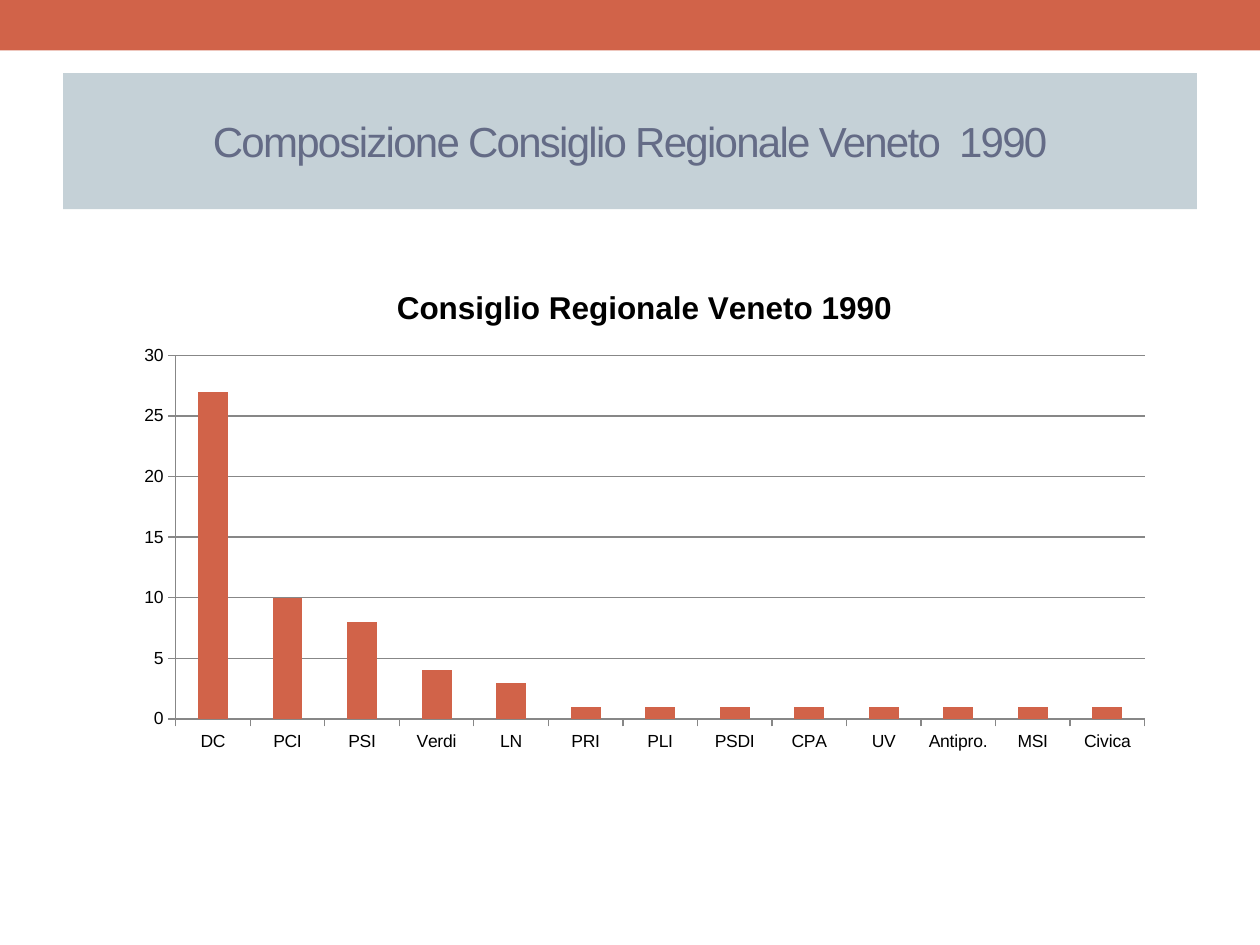
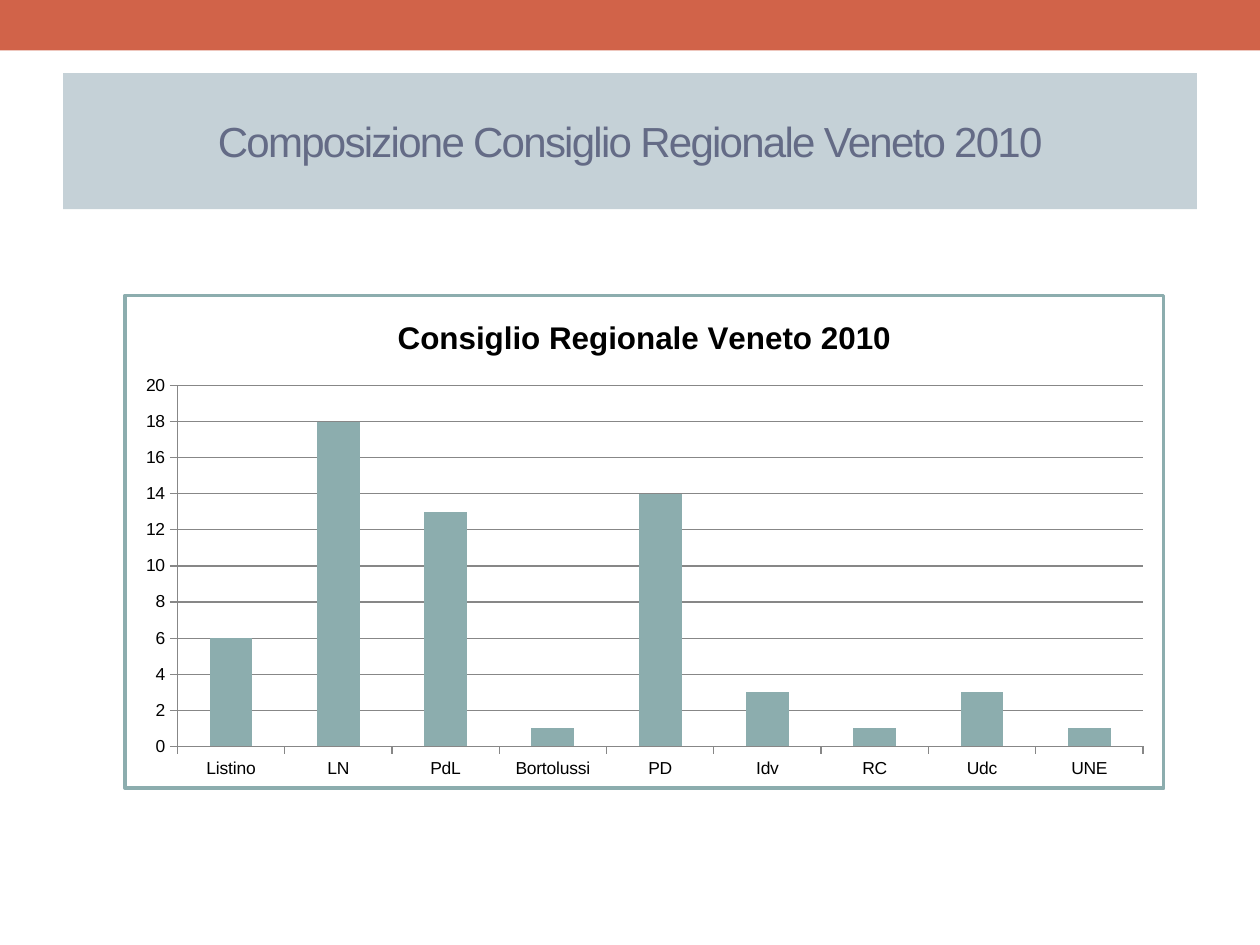
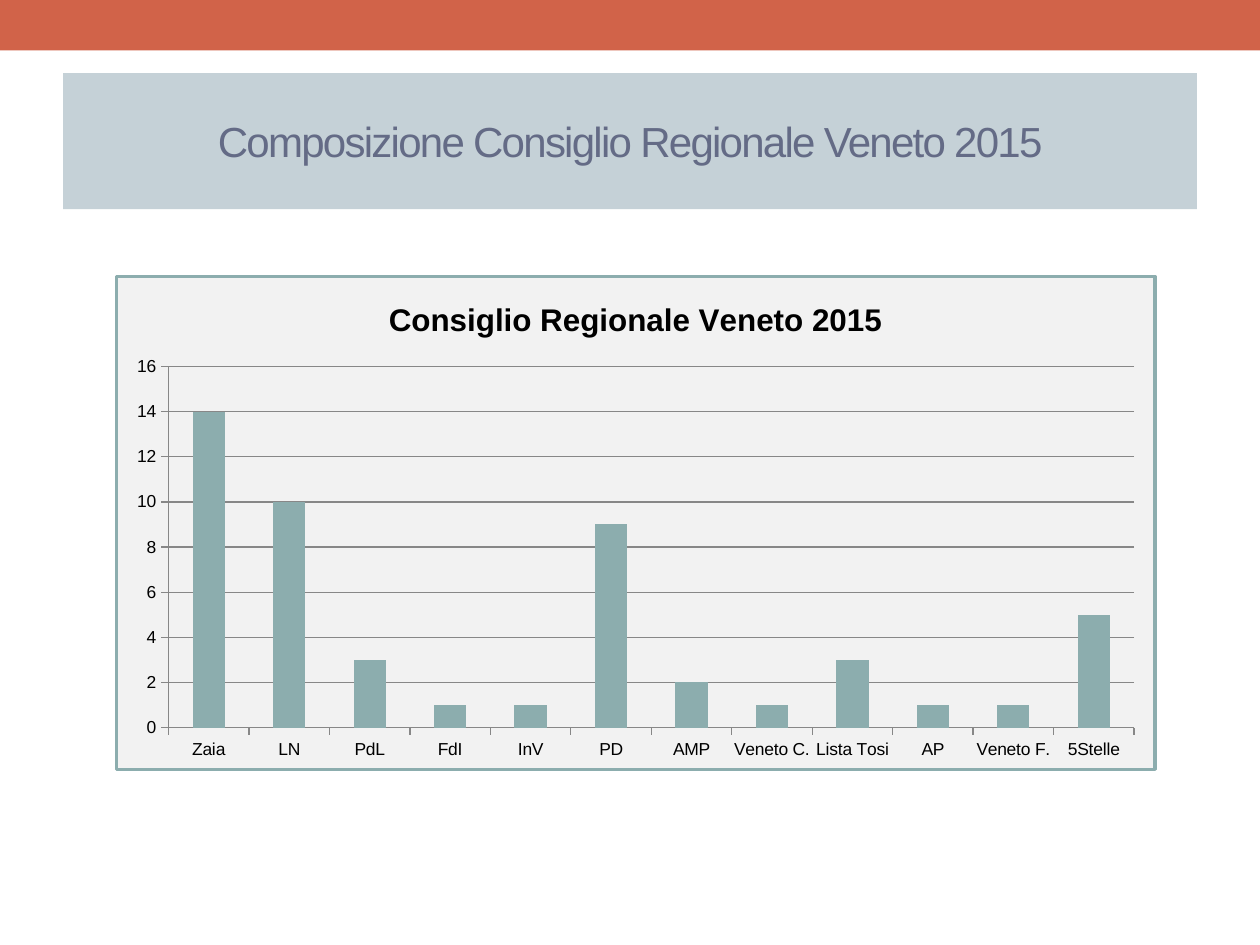
from dataclasses import dataclass

from lxml.etree import SubElement
from pptx import Presentation
from pptx.chart.data import CategoryChartData
from pptx.dml.color import RGBColor as RGB
from pptx.enum.chart import XL_CHART_TYPE as ChartType, XL_TICK_MARK as Tick
from pptx.enum.shapes import MSO_SHAPE as Shape
from pptx.enum.text import MSO_ANCHOR as Anchor, MSO_AUTO_SIZE as AutoSize, PP_ALIGN as Align
from pptx.oxml import parse_xml
from pptx.oxml.ns import nsdecls, qn
from pptx.util import Inches, Pt


@dataclass(frozen=True)
class Theme:
    font: str = "Arial"
    accent: str = "D16349"
    teal: str = "8CADAE"
    title_fill: str = "C5D1D7"
    title_text: str = "646B86"
    chart_text: str = "000000"
    axis: str = "878787"
    white: str = "FFFFFF"
    light: str = "F2F2F2"
    title_size: int = 24
    heading_size: int = 18
    label_size: int = 10
    title_spacing: int = -1
    axis_width: float = 0.75
    frame_width: int = 2


class Deck:
    """Holds the theme, a grid of 100 columns by 75 rows, and the current slide."""

    COLUMNS, ROWS = 100, 75

    def __init__(self, theme):
        self.theme = theme
        self.prs = Presentation()
        self.prs.slide_width, self.prs.slide_height = Inches(10), Inches(7.5)
        self.layout = self.prs.slide_layouts[5]
        self.slide = None

    def box(self, column, row, columns, rows):
        across = self.prs.slide_width / self.COLUMNS
        down = self.prs.slide_height / self.ROWS
        return [round(n) for n in (column * across, row * down, columns * across, rows * down)]

    def style_font(self, font, size, color, bold=False):
        font.name, font.size, font.bold = self.theme.font, Pt(size), bold
        font.color.rgb = RGB.from_string(color)

    def new_slide(self, title):
        first = self.slide is None
        self.slide = self.prs.slides.add_slide(self.layout)
        if first:
            self.shared_band()
        self.title(title)

    def shared_band(self):
        """Draw the top band once and move it to the layout."""
        band = self.slide.shapes.add_shape(Shape.RECTANGLE, *self.box(0, 0, self.COLUMNS, 4))
        band.shadow.inherit = False
        band.fill.solid()
        band.fill.fore_color.rgb = RGB.from_string(self.theme.accent)
        band.line.fill.background()
        self.layout.shapes.element.insert(2, band.element)

    def title(self, text):
        title = self.slide.shapes.title
        title.left, title.top, title.width, title.height = self.box(5, 5.8, 90, 10.8)
        title.fill.solid()
        title.fill.fore_color.rgb = RGB.from_string(self.theme.title_fill)
        frame = title.text_frame
        frame.word_wrap, frame.auto_size = True, AutoSize.NONE
        frame.vertical_anchor = Anchor.MIDDLE
        paragraph = frame.paragraphs[0]
        paragraph.alignment = Align.CENTER
        run = paragraph.add_run()
        run.text = text
        self.style_font(run.font, self.theme.title_size, self.theme.title_text)
        run.font._element.set("spc", str(self.theme.title_spacing * 100))

    def column_chart(self, heading, seats, place, kind, color, top, step, area=None):
        data = CategoryChartData()
        data.categories = list(seats)
        data.add_series(heading, list(seats.values()))
        position = self.box(*place, 82.7, 39.4)
        chart = self.slide.shapes.add_chart(kind, *position, data).chart
        self.style_font(chart.font, self.theme.label_size, self.theme.chart_text)
        chart.has_legend = False

        # Heading
        chart.has_title = True
        run = chart.chart_title.text_frame.paragraphs[0].add_run()
        run.text = heading
        self.style_font(run.font, self.theme.heading_size, self.theme.chart_text, bold=True)

        # Columns
        plot = chart.plots[0]
        plot.gap_width, plot.vary_by_categories = 150, False
        if kind == ChartType.COLUMN_STACKED:
            plot.overlap = 100
        columns = plot.series[0].format.fill
        columns.solid()
        columns.fore_color.rgb = RGB.from_string(color)

        # Axes and gridlines
        seat_axis = chart.value_axis
        seat_axis.minimum_scale, seat_axis.maximum_scale = 0, top
        seat_axis.major_unit = step
        seat_axis.has_major_gridlines = True
        for axis in (chart.category_axis, seat_axis):
            axis.major_tick_mark = Tick.OUTSIDE
        for part in (chart.category_axis, seat_axis, seat_axis.major_gridlines):
            part.format.line.width = Pt(self.theme.axis_width)
            part.format.line.color.rgb = RGB.from_string(self.theme.axis)
        self.chart_area(chart, area)

    def chart_area(self, chart, color):
        """Fill and frame the chart, or leave it clear when there is no colour."""
        area = parse_xml(f"<c:spPr {nsdecls('c', 'a')}/>")

        def paint(parent, value):
            if value is None:
                SubElement(parent, qn("a:noFill"))
            else:
                SubElement(SubElement(parent, qn("a:solidFill")), qn("a:srgbClr"), val=value)

        paint(area, color)
        frame = SubElement(area, qn("a:ln"), w=str(Pt(self.theme.frame_width)))
        paint(frame, color and self.theme.teal)
        chart.element.find(qn("c:chart")).addnext(area)


def main():
    theme = Theme()
    deck = Deck(theme)
    council = "Consiglio Regionale Veneto"

    # Council of 1990
    seats_1990 = {"DC": 27, "PCI": 10, "PSI": 8, "Verdi": 4, "LN": 3}
    single_seats = ("PRI", "PLI", "PSDI", "CPA", "UV", "Antipro.", "MSI", "Civica")
    seats_1990.update(dict.fromkeys(single_seats, 1))
    deck.new_slide(f"Composizione {council}  1990")
    deck.column_chart(f"{council} 1990", seats_1990, (9.8, 21), ChartType.COLUMN_CLUSTERED,
                      theme.accent, top=30, step=5)

    # Councils of 2010 and 2015
    seats_2010 = {"Listino": 6, "LN": 18, "PdL": 13, "Bortolussi": 1, "PD": 14,
                  "Idv": 3, "RC": 1, "Udc": 3, "UNE": 1}
    seats_2015 = {"Zaia": 14, "LN": 10, "PdL": 3, "FdI": 1, "InV": 1, "PD": 9, "AMP": 2,
                  "Veneto C.": 1, "Lista Tosi": 3, "AP": 1, "Veneto F.": 1, "5Stelle": 5}
    for year, seats, place, top, area in (
        (2010, seats_2010, (9.8, 23.3), 20, theme.white),
        (2015, seats_2015, (9.1, 21.8), 16, theme.light),
    ):
        deck.new_slide(f"Composizione {council} {year}")
        deck.column_chart(f"{council} {year}", seats, place, ChartType.COLUMN_STACKED,
                          theme.teal, top=top, step=2, area=area)

    deck.prs.save("out.pptx")


if __name__ == "__main__":
    main()
